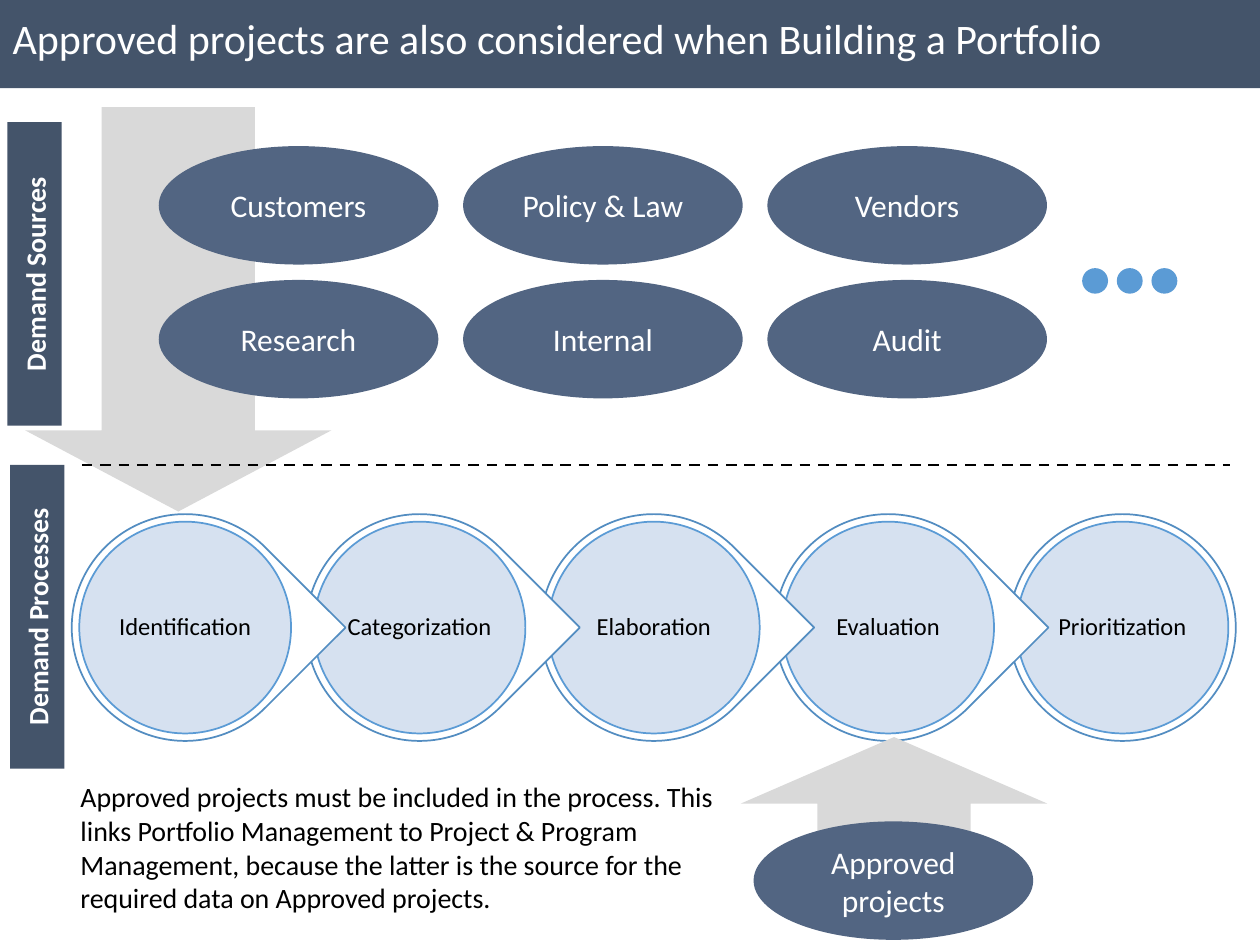
from pptx import Presentation
from pptx.dml.color import RGBColor
from pptx.enum.dml import MSO_LINE
from pptx.enum.shapes import MSO_CONNECTOR, MSO_SHAPE as SHAPE
from pptx.enum.text import MSO_ANCHOR as ANCHOR, MSO_AUTO_SIZE as AUTO, PP_ALIGN as ALIGN
from pptx.oxml.ns import qn
from pptx.util import Pt
from lxml.etree import SubElement

TITLE = "Approved projects are also considered when Building a Portfolio"
SOURCES = [
    ["Customers", "Policy & Law", "Vendors"],
    ["Research", "Internal", "Audit"],
]
PROCESSES = ["Identification", "Categorization", "Elaboration", "Evaluation", "Prioritization"]
BANDS = [("Demand Sources", 4.3, 69.8), ("Demand Processes", 5.8, 265.7)]
APPROVED = "Approved projects"
NOTE = ("Approved projects must be included in the process. This links Portfolio Management "
        "to Project & Program Management, because the latter is the source for the required "
        "data on Approved projects.")

THEME = {
    "font": "Calibri",
    "band": "44546A", "source": "526582", "arrow": "D9D9D9", "dot": "5B9BD5",
    "disc": "D2DEEF", "disc_line": "5B9BD5", "ring_line": "538DC1",
    "light": "FFFFFF", "dark": "000000",
    "title_size": 24, "source_size": 18, "body_size": 16, "process_size": 14,
}

SOURCE_SIZE = (159.8, 67.7)
SOURCE_LEFT, SOURCE_TOP, SOURCE_DX, SOURCE_DY = 90.7, 83.5, 173.9, 76.5
RING, RING_LEFT, RING_TOP, RING_DX = 129.6, 41, 293.8, 133.9
DISC_INSET, LABEL_INSET = 4.3, 21.6
DOT_LEFT, DOT_TOP, DOT_DX = 618.4, 153.2, 19.8


def color(name):
    return RGBColor.from_string(THEME[name])


def set_text(sp, text, size="body_size", ink="light", bold=False, align=ALIGN.CENTER,
             anchor=ANCHOR.MIDDLE, inset=None, spacing=None):
    tf = sp.text_frame
    tf.word_wrap = True
    tf.auto_size = AUTO.NONE
    tf.vertical_anchor = anchor
    if inset is not None:
        tf.margin_left = tf.margin_right = tf.margin_top = tf.margin_bottom = Pt(inset)
    p = tf.paragraphs[0]
    p.alignment = align
    if spacing:
        p.line_spacing = spacing
    r = p.add_run()
    r.text = text
    r.font.name = THEME["font"]
    r.font.size = Pt(THEME[size])
    r.font.bold = bold
    r.font.color.rgb = color(ink)


def add_shape(slide, kind, x, y, w, h, fill, line=None):
    sp = slide.shapes.add_shape(kind, Pt(x), Pt(y), Pt(w), Pt(h))
    sp.shadow.inherit = False
    sp.fill.solid()
    sp.fill.fore_color.rgb = color(fill)
    if line:
        sp.line.color.rgb = color(line)
        sp.line.width = Pt(1)
    else:
        sp.line.fill.background()
    return sp


def add_arrow(slide, kind, x, y, w, h, head):
    sp = add_shape(slide, kind, x, y, w, h, "arrow")
    sp.adjustments[0] = 0.5
    sp.adjustments[1] = head


def add_textbox(slide, x, y, w, h, text, **fmt):
    sp = slide.shapes.add_textbox(Pt(x), Pt(y), Pt(w), Pt(h))
    set_text(sp, text, ink="dark", **fmt)


def add_source(slide, x, y, text):
    sp = add_shape(slide, SHAPE.OVAL, x, y, *SOURCE_SIZE, "source")
    set_text(sp, text, size="source_size")


def add_process(slide, index, text):
    x = RING_LEFT + index * RING_DX
    is_last = index == len(PROCESSES) - 1
    ring = add_shape(slide, SHAPE.OVAL if is_last else SHAPE.TEAR, x, RING_TOP, RING, RING,
                     "light", "ring_line")
    if not is_last:
        ring.rotation = 45
    side = RING - 2 * DISC_INSET
    disc = add_shape(slide, SHAPE.OVAL, x + DISC_INSET, RING_TOP + DISC_INSET, side, side,
                     "disc", "disc_line")
    rgb = disc.fill._xPr.find(qn("a:solidFill")).find(qn("a:srgbClr"))
    SubElement(rgb, qn("a:alpha")).set("val", "90000")
    side = RING - 2 * LABEL_INSET
    add_textbox(slide, x + LABEL_INSET, RING_TOP + LABEL_INSET, side, side, text,
                size="process_size", inset=1.4, spacing=0.9)


def add_divider(slide):
    line = slide.shapes.add_connector(MSO_CONNECTOR.STRAIGHT, Pt(46.8), Pt(265.7),
                                      Pt(702.7), Pt(265.7))
    line.line.color.rgb = color("dark")
    line.line.width = Pt(1.5)
    line.line.dash_style = MSO_LINE.DASH
    SubElement(line._element.spPr, qn("a:effectLst"))


def main():
    prs = Presentation()
    prs.slide_width, prs.slide_height = Pt(720), Pt(540)
    slide = prs.slides.add_slide(prs.slide_layouts[5])

    title = slide.shapes.title
    title.left, title.top, title.width, title.height = Pt(0), Pt(0), Pt(720), Pt(50.4)
    title.fill.solid()
    title.fill.fore_color.rgb = color("band")
    set_text(title, TITLE, size="title_size", align=ALIGN.LEFT, anchor=ANCHOR.TOP, inset=7.2)

    # Each process overlaps the one after it, so draw from right to left
    for i, name in reversed(list(enumerate(PROCESSES))):
        add_process(slide, i, name)

    add_arrow(slide, SHAPE.DOWN_ARROW, 14.4, 61.2, 175, 231.1, 0.265)
    for name, x, y in BANDS:
        band = add_shape(slide, SHAPE.RECTANGLE, x, y, 31, 173.5, "band")
        set_text(band, name, bold=True)
        band.text_frame._txBody.bodyPr.set("vert", "vert270")

    for row, names in enumerate(SOURCES):
        for col, name in enumerate(names):
            add_source(slide, SOURCE_LEFT + col * SOURCE_DX, SOURCE_TOP + row * SOURCE_DY, name)
    for i in range(3):
        add_shape(slide, SHAPE.OVAL, DOT_LEFT + i * DOT_DX, DOT_TOP, 14.8, 14.6, "dot")

    add_arrow(slide, SHAPE.UP_ARROW, 423.4, 421.2, 175, 69.1, 0.55)
    add_source(slide, 430.6, 469.4, APPROVED)
    add_divider(slide)
    add_textbox(slide, 38.9, 442.1, 394.6, 85, NOTE, align=ALIGN.LEFT, anchor=ANCHOR.TOP)

    prs.save("out.pptx")


if __name__ == "__main__":
    main()
